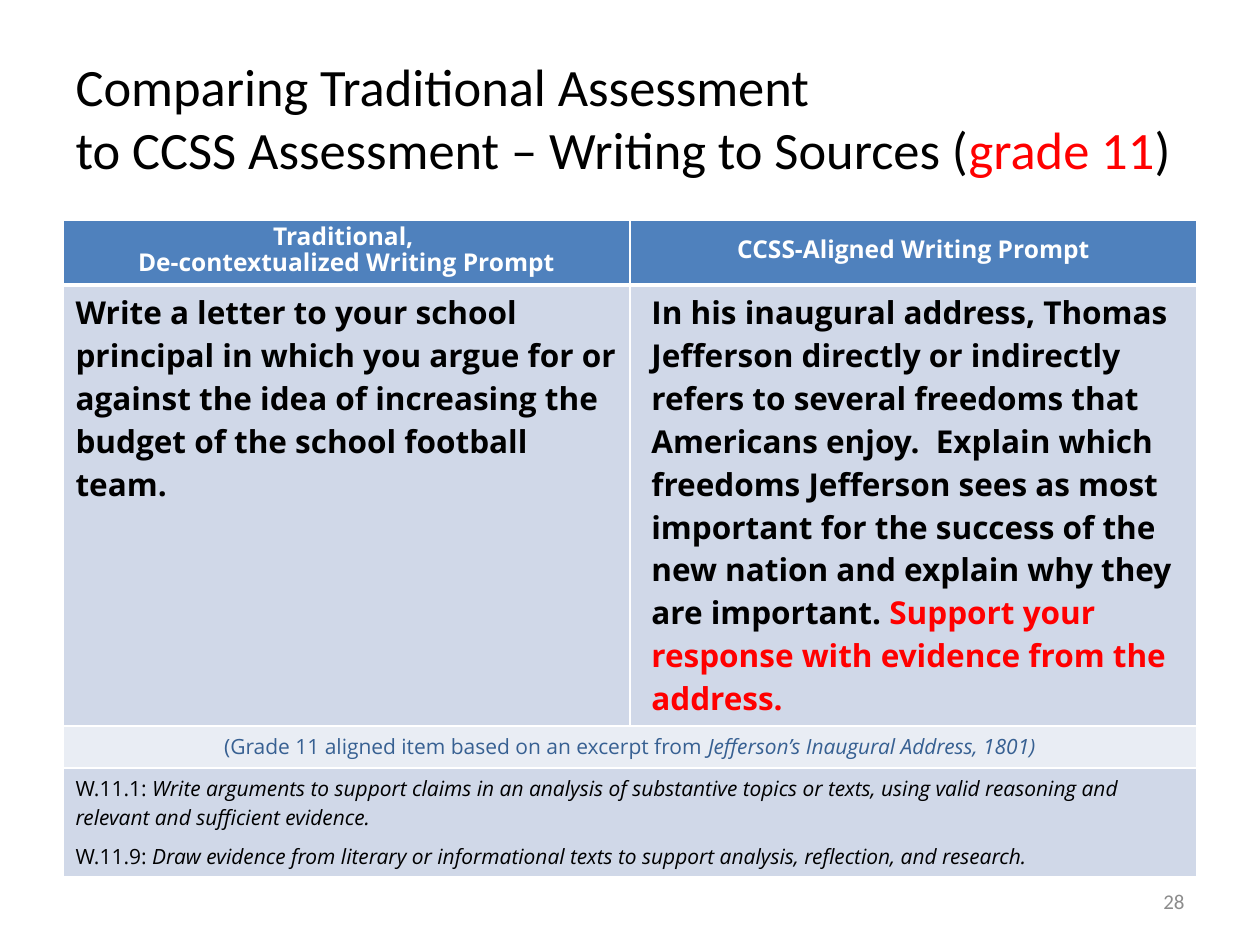
import pptx
import pptx.dml.color
import pptx.enum.text
import pptx.oxml.ns
import pptx.util
from lxml import etree

COLORS = {"white": "FFFFFF", "black": "000000", "red": "FF0000", "blue": "4F81BD",
          "navy": "376092", "band": "D0D8E8", "pale": "E9EDF4", "gray": "8C8C8C"}
ALIGN = pptx.enum.text.PP_ALIGN
MIDDLE = pptx.enum.text.MSO_ANCHOR.MIDDLE


def rgb(name):
    return pptx.dml.color.RGBColor.from_string(COLORS[name])


class SlideBuilder:
    heading_font = "Calibri"
    table_font = "Open Sans"

    def __init__(self, presentation):
        self.width = presentation.slide_width
        self.height = presentation.slide_height
        self.slide = presentation.slides.add_slide(presentation.slide_layouts[5])

    def box(self, left, top, width, height):
        return (int(self.width * left), int(self.height * top),
                int(self.width * width), int(self.height * height))

    def fill_text(self, frame, paragraphs, font, size, color="black", bold=False,
                  align=ALIGN.LEFT, before=0, line=None):
        frame.word_wrap = True
        for index, runs in enumerate(paragraphs):
            paragraph = frame.add_paragraph() if index else frame.paragraphs[0]
            paragraph.alignment = align
            paragraph.space_before = pptx.util.Pt(before)
            if line:
                paragraph.line_spacing = pptx.util.Pt(line)
            paragraph.font.name = font
            paragraph.font.size = pptx.util.Pt(size)
            paragraph.font.bold = bold
            paragraph.font.color.rgb = rgb(color)
            for text, style in runs:
                for part_index, part in enumerate(text.split("\n")):
                    if part_index:
                        paragraph.add_line_break()
                    run = paragraph.add_run()
                    run.text = part
                    run.font.name = font
                    run.font.size = pptx.util.Pt(size)
                    run.font.bold = bold
                    run.font.italic = style == "italic"
                    run.font.color.rgb = rgb(style if style in COLORS else color)

    def title(self, runs, area):
        shape = self.slide.shapes.title
        shape.left, shape.top, shape.width, shape.height = self.box(*area)
        shape.text_frame.auto_size = pptx.enum.text.MSO_AUTO_SIZE.NONE
        shape.text_frame.vertical_anchor = MIDDLE
        self.fill_text(shape.text_frame, [runs], self.heading_font, 30)

    def label(self, text, area, **style):
        frame = self.slide.shapes.add_textbox(*self.box(*area)).text_frame
        frame.vertical_anchor = MIDDLE
        self.fill_text(frame, [[(text, None)]], self.heading_font, **style)

    def table(self, area, columns, row_heights):
        table = self.slide.shapes.add_table(
            len(row_heights), columns, *self.box(*area)).table
        for row, share in zip(table.rows, row_heights):
            row.height = int(self.height * share)
        return table

    def cell(self, cell, paragraphs, fill, bottom=1, **style):
        properties = cell._tc.get_or_add_tcPr()
        for side, points in (("L", 1), ("R", 1), ("T", 1), ("B", bottom)):
            line = etree.SubElement(properties, pptx.oxml.ns.qn(f"a:ln{side}"),
                                    w=str(pptx.util.Pt(points)))
            solid = etree.SubElement(line, pptx.oxml.ns.qn("a:solidFill"))
            etree.SubElement(solid, pptx.oxml.ns.qn("a:srgbClr"), val=COLORS["white"])
        cell.fill.solid()
        cell.fill.fore_color.rgb = rgb(fill)
        self.fill_text(cell.text_frame, paragraphs, self.table_font, **style)


def main():
    presentation = pptx.Presentation()
    presentation.slide_width = pptx.util.Inches(10)
    presentation.slide_height = pptx.util.Inches(7.5)
    builder = SlideBuilder(presentation)
    builder.title([
        ("Comparing Traditional Assessment \nto CCSS Assessment – Writing to Sources (", None),
        ("grade 11", "red"), (")", None)], (0.05, 0.04, 0.9, 1 / 6))

    heights = [inches / 7.5 for inches in (0.5, 3.5, 0.33, 0.86)]
    table = builder.table((0.05, 1.75 / 7.5, 0.9, sum(heights)), 2, heights)
    headers = [["Traditional, ", "De-contextualized Writing Prompt"],
               ["CCSS-Aligned Writing Prompt"]]
    prompts = [
        [("Write a letter to your school principal in which you argue for or against "
          "the idea of increasing the budget of the school football team.", None)],
        [("In his inaugural address, Thomas Jefferson directly or indirectly refers to "
          "several freedoms that Americans enjoy.  Explain which freedoms Jefferson sees "
          "as most important for the success of the new nation and explain why they are "
          "important. ", None),
         ("Support your response with evidence from the address.", "red")]]
    for column, (header, prompt) in enumerate(zip(headers, prompts)):
        builder.cell(table.cell(0, column), [[(text, None)] for text in header], "blue",
                     bottom=3, size=14, color="white", bold=True,
                     align=ALIGN.CENTER, line=14.8)
        builder.cell(table.cell(1, column), [prompt], "band", size=18, bold=True,
                     before=0 if column else 6)
    table.cell(0, 1).vertical_anchor = MIDDLE
    table.cell(1, 1).margin_left = pptx.util.Inches(0.17)

    for row in (2, 3):
        table.cell(row, 0).merge(table.cell(row, 1))
    builder.cell(table.cell(2, 0), [[
        ("(Grade 11 aligned item based on an excerpt from ", None),
        ("Jefferson’s Inaugural Address, 1801)", "italic")]],
        "pale", size=12, color="navy", align=ALIGN.CENTER)
    standards = {
        "W.11.1: ": "Write arguments to support claims in an analysis of substantive topics "
                    "or texts, using valid reasoning and relevant and sufficient evidence.",
        "W.11.9: ": "Draw evidence from literary or informational texts to support "
                    "analysis, reflection, and research."}
    builder.cell(table.cell(3, 0),
                 [[(code, None), (text, "italic")] for code, text in standards.items()],
                 "band", size=12, before=6)

    builder.label("28", (0.717, 6.95 / 7.5, 0.233, 0.4 / 7.5),
                  size=12, color="gray", align=ALIGN.RIGHT)
    presentation.save("out.pptx")


if __name__ == "__main__":
    main()
